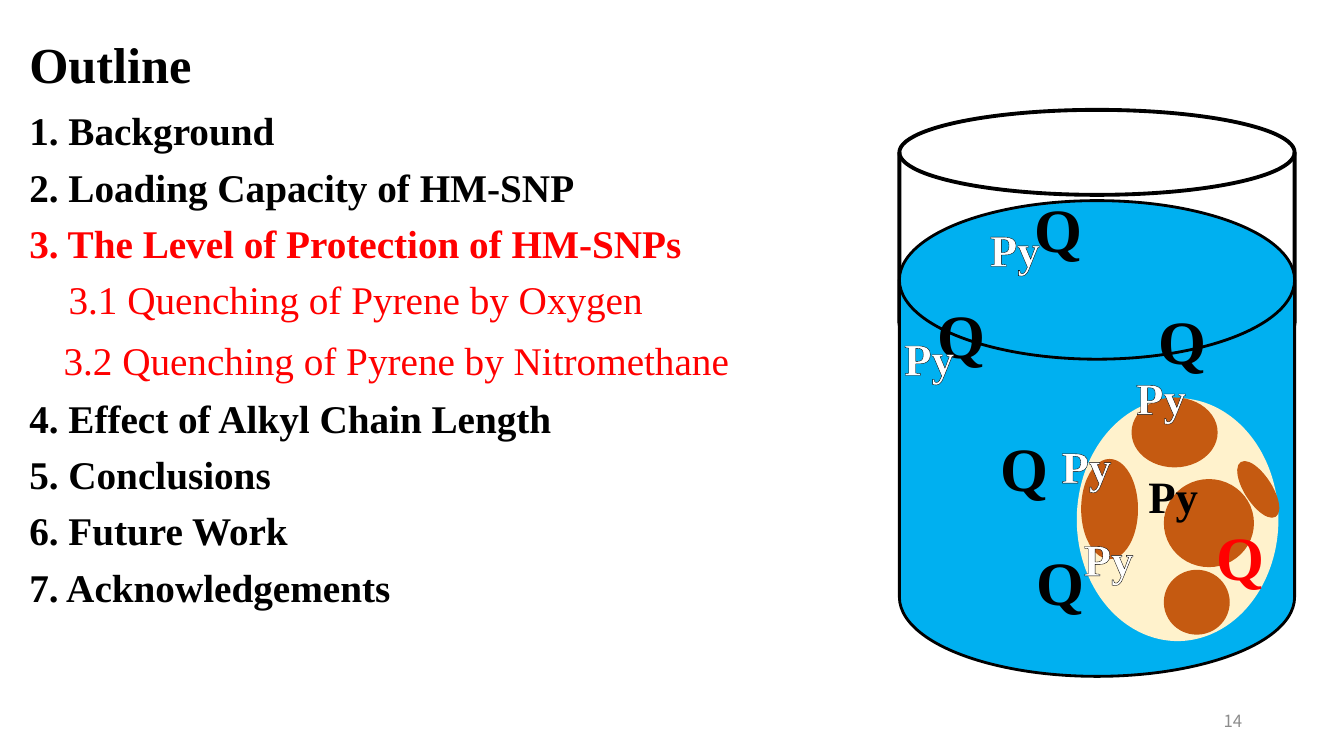
from pptx import Presentation
from pptx.dml.color import RGBColor
from pptx.enum.shapes import MSO_SHAPE
from pptx.enum.text import MSO_ANCHOR, MSO_AUTO_SIZE, PP_ALIGN
from pptx.oxml import parse_xml
from pptx.oxml.ns import nsdecls
from pptx.util import Inches, Pt

DISK, OVAL = MSO_SHAPE.FLOWCHART_MAGNETIC_DISK, MSO_SHAPE.OVAL
TOP, MIDDLE = MSO_ANCHOR.TOP, MSO_ANCHOR.MIDDLE
LEFT, RIGHT = PP_ALIGN.LEFT, PP_ALIGN.RIGHT
NO_FIT = MSO_AUTO_SIZE.NONE

BLACK, WHITE, RED, GREY = "000000", "FFFFFF", "FF0000", "8C8C8C"
WATER, SHELL, PATCH = "00B0F0", "FFF2CC", "C55A11"


def color(value):
    return RGBColor.from_string(value)


class SlideBuilder:
    font = "Times New Roman"

    def __init__(self, page):
        self.page = page

    def place(self, shape, at):
        shape.left, shape.top, shape.width, shape.height = map(Inches, at)

    def style(self, para, size, ink, bold=True, font=None):
        for span in para.runs:
            span.font.size, span.font.bold = Pt(size), bold
            span.font.name = font or self.font
            span.font.color.rgb = color(ink)

    def title(self, text, at):
        box = self.page.shapes.title
        self.place(box, at)
        frame = box.text_frame
        frame.text = text
        frame.vertical_anchor, frame.auto_size = MIDDLE, NO_FIT
        para = frame.paragraphs[0]
        para.alignment, para.line_spacing = LEFT, 0.9
        self.style(para, 36, BLACK)

    def outline(self, items, at):
        box = self.page.placeholders[1]
        self.place(box, at)
        frame = box.text_frame
        frame.text = "\n".join(item[0] for item in items)
        frame.vertical_anchor, frame.auto_size = TOP, NO_FIT
        for para, (_, ink, bold, indent, before) in zip(frame.paragraphs, items):
            para.line_spacing, para.space_before = 0.9, Pt(before)
            settings = para._p.get_or_add_pPr()
            settings.set("marL", str(Inches(indent)))
            settings.set("indent", "0")
            settings.append(parse_xml(f"<a:buNone {nsdecls('a')}/>"))
            self.style(para, 28, ink, bold)

    def shape(self, kind, at, fill=None, line=None, width=1, rotation=0):
        shape = self.page.shapes.add_shape(kind, *map(Inches, at))
        shape.shadow.inherit = False
        shape.rotation = rotation
        if fill:
            shape.fill.solid()
            shape.fill.fore_color.rgb = color(fill)
        else:
            shape.fill.background()
        if line:
            shape.line.color.rgb = color(line)
            shape.line.width = Pt(width)
        else:
            shape.line.fill.background()

    def text(self, text, at, size, ink, bold=True, font=None, align=LEFT, anchor=TOP):
        box = self.page.shapes.add_textbox(*map(Inches, at))
        frame = box.text_frame
        frame.word_wrap, frame.vertical_anchor = True, anchor
        frame.text = text
        para = frame.paragraphs[0]
        para.alignment = align
        self.style(para, size, ink, bold, font)
        return para.runs[0]

    def pyrene(self, left, top, ink=WHITE):
        span = self.text("Py", (left, top, 0.92, 0.84), 32, ink)
        if ink == WHITE:
            span.font._element.insert(0, parse_xml(
                f'<a:ln {nsdecls("a")} w="0"><a:solidFill>'
                f'<a:srgbClr val="{BLACK}"/></a:solidFill></a:ln>'))

    def quencher(self, left, top, ink=BLACK):
        span = self.text("Q", (left, top, 0.92, 1.11), 44, ink)
        if ink == RED:
            settings = span.font._element
            settings.set("spc", "50")
            settings.insert(1, parse_xml(
                f'<a:effectLst {nsdecls("a")}><a:outerShdw blurRad="38100" dist="12700" '
                f'dir="2700000"><a:srgbClr val="{GREY}"/></a:outerShdw></a:effectLst>'))


def main():
    deck = Presentation()
    deck.slide_width, deck.slide_height = Inches(13.33), Inches(7.5)
    builder = SlideBuilder(deck.slides.add_slide(deck.slide_layouts[1]))

    # Title and outline: text, colour, bold, indent, space before
    builder.title("Outline", (0.19, 0.24, 9, 0.85))
    builder.outline([
        ("1. Background", BLACK, True, 0, 10),
        ("2. Loading Capacity of HM-SNP", BLACK, True, 0, 10),
        ("3. The Level of Protection of HM-SNPs", RED, True, 0, 10),
        ("3.1 Quenching of Pyrene by Oxygen", RED, False, 0.39, 10),
        ("3.2 Quenching of Pyrene by Nitromethane", RED, False, 0.34, 13),
        ("4. Effect of Alkyl Chain Length", BLACK, True, 0, 11),
        ("5. Conclusions", BLACK, True, 0, 10),
        ("6. Future Work", BLACK, True, 0, 10),
        ("7. Acknowledgements", BLACK, True, 0, 10),
    ], (0.19, 1.06, 9.8, 6.14))

    # Beaker and water
    builder.shape(DISK, (8.92, 1.09, 3.92, 2.53), line=BLACK, width=2.75)
    builder.shape(DISK, (8.92, 1.99, 3.92, 4.72), WATER, BLACK, 2)

    # Particle with its patches
    builder.shape(OVAL, (10.68, 3.95, 2, 2.41), SHELL)
    for *at, rotation in [
        (11.23, 3.95, 0.84, 0.68, 0),
        (11.55, 4.76, 0.88, 0.86, 0),
        (10.73, 4.56, 0.55, 0.98, 0),
        (11.55, 5.66, 0.64, 0.63, 0),
        (12.35, 4.54, 0.26, 0.63, 327.4),
    ]:
        builder.shape(OVAL, at, PATCH, PATCH, rotation=rotation)

    # Pyrene and quencher labels
    builder.pyrene(11.29, 4.6, BLACK)
    for left, top in [(10.65, 5.22), (10.43, 4.3), (11.17, 3.62)]:
        builder.pyrene(left, top)
    for quencher, pyrene in [((10.16, 1.84), (9.72, 2.15)), ((9.2, 2.9), (8.87, 3.23))]:
        builder.quencher(*quencher)
        builder.pyrene(*pyrene)
    for left, top in [(11.39, 2.96), (9.82, 4.22), (10.18, 5.35)]:
        builder.quencher(left, top)
    builder.quencher(11.97, 5.1, RED)

    # Page number
    builder.text("14", (9.42, 6.95, 3, 0.4), 12, GREY, False,
                 "Noto Sans CJK KR", RIGHT, MIDDLE)

    deck.save("out.pptx")


if __name__ == "__main__":
    main()
